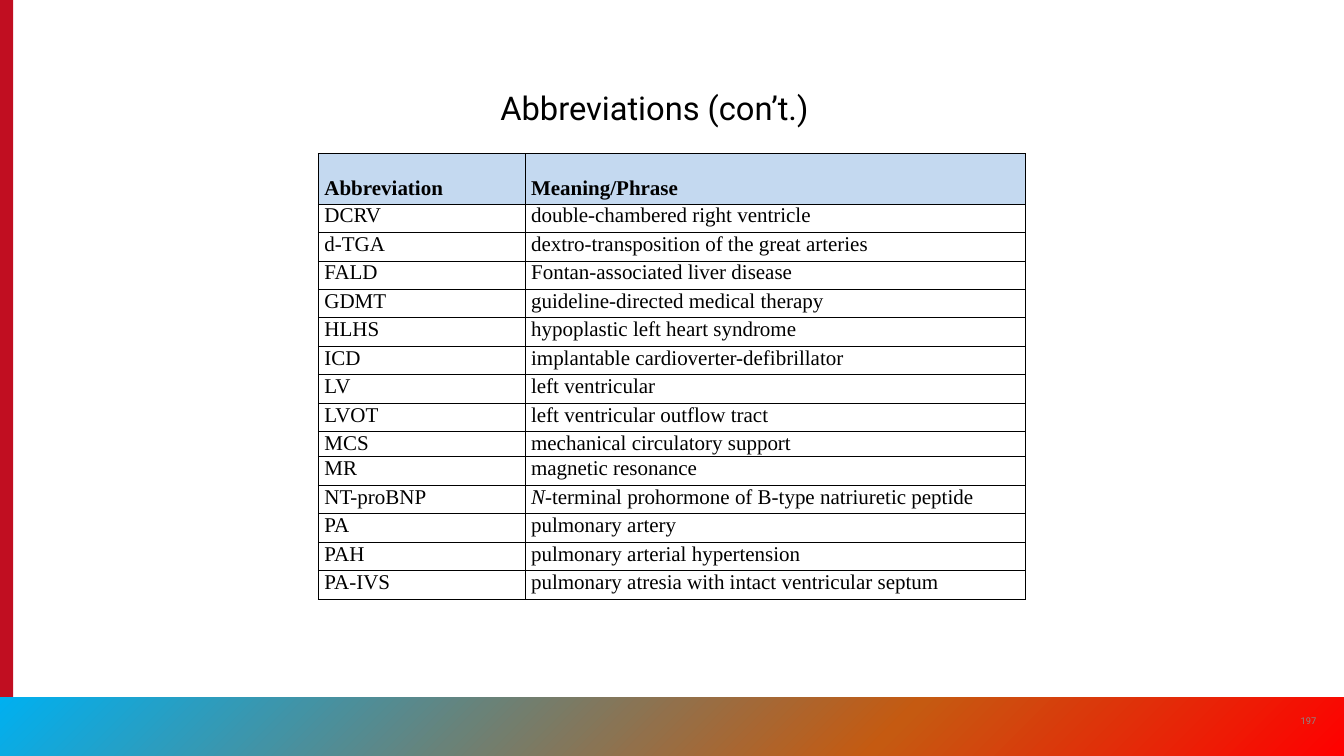
import pptx
import pptx.util
import pptx.dml.color
import pptx.enum.shapes
import pptx.enum.text
import pptx.oxml
from pptx.util import Cm, Pt

NS = 'xmlns:a="http://schemas.openxmlformats.org/drawingml/2006/main"'


def color(hex_string):
    return pptx.dml.color.RGBColor.from_string(hex_string)


def style(p, font, size, hex_string):
    for r in p.runs:
        r.font.name = font
        r.font.size = Pt(size)
        r.font.color.rgb = color(hex_string)


prs = pptx.Presentation()
prs.slide_width, prs.slide_height = Cm(40.64), Cm(22.86)
s = prs.slides.add_slide(prs.slide_layouts[6])

# Red side bar and gradient footer
bars = []
for left, top, width, height in [(0, 0, 0.4, 22.86), (0, 21.08, 40.64, 1.78)]:
    bar = s.shapes.add_shape(pptx.enum.shapes.MSO_SHAPE.RECTANGLE,
                             Cm(left), Cm(top), Cm(width), Cm(height))
    bar.shadow.inherit = False
    bar.line.fill.background()
    bar.fill.solid()
    bar.fill.fore_color.rgb = color("C10E21")
    bars.append(bar)
footer = bars[1]
stops = "".join(f'<a:gs pos="{pos * 1000}"><a:srgbClr val="{c}"/></a:gs>'
                for pos, c in [(0, "00B0F0"), (66, "C55A11"), (100, "FF0000")])
solid = footer._element.spPr.find(pptx.oxml.ns.qn("a:solidFill"))
footer._element.spPr.replace(solid, pptx.oxml.parse_xml(
    f'<a:gradFill {NS} rotWithShape="1"><a:gsLst>{stops}</a:gsLst>'
    '<a:lin ang="2700000" scaled="0"/></a:gradFill>'))

# Slide number
number = s.shapes.add_textbox(Cm(38.96), Cm(21.18), Cm(1.22), Cm(1.22))
tf = number.text_frame
tf.text = "197"
tf.word_wrap = True
tf.margin_left = tf.margin_right = 0
tf.vertical_anchor = pptx.enum.text.MSO_ANCHOR.MIDDLE
tf.paragraphs[0].alignment = pptx.enum.text.PP_ALIGN.CENTER
style(tf.paragraphs[0], "Roboto", 8, "8A8B8A")

# Title
title = s.shapes.add_textbox(Cm(14.88), Cm(2.54), Cm(10.85), Cm(1.45))
tf = title.text_frame
tf.text = "Abbreviations (con’t.)"
tf.word_wrap = True
style(tf.paragraphs[0], "Roboto", 28, "000000")

# Abbreviation table
entries = [
    ("Abbreviation", "Meaning/Phrase"),
    ("DCRV", "double-chambered right ventricle"),
    ("d-TGA", "dextro-transposition of the great arteries"),
    ("FALD", "Fontan-associated liver disease"),
    ("GDMT", "guideline-directed medical therapy"),
    ("HLHS", "hypoplastic left heart syndrome"),
    ("ICD", "implantable cardioverter-defibrillator"),
    ("LV", "left ventricular"),
    ("LVOT", "left ventricular outflow tract"),
    ("MCS", "mechanical circulatory support"),
    ("MR", "magnetic resonance"),
    ("NT-proBNP", "N-terminal prohormone of B-type natriuretic peptide"),
    ("PA", "pulmonary artery"),
    ("PAH", "pulmonary arterial hypertension"),
    ("PA-IVS", "pulmonary atresia with intact ventricular septum"),
]
heights = {"Abbreviation": 1.35, "MCS": 0.54}
table = s.shapes.add_table(len(entries), 2, Cm(9.63), Cm(4.65),
                           Cm(21.39), Cm(13.36)).table
table.horz_banding = False
for column, width in zip(table.columns, (6.25, 15.14)):
    column.width = Cm(width)

for i, entry in enumerate(entries):
    table.rows[i].height = Cm(heights.get(entry[0], 0.86))
    for j, text in enumerate(entry):
        cell = table.cell(i, j)
        cell.margin_left = cell.margin_right = Cm(0.18)
        cell.margin_top = cell.margin_bottom = 0
        p = cell.text_frame.paragraphs[0]
        p.text = text
        p.space_after = Pt(8)
        if text.startswith("N-"):
            p.text = "N"
            p.runs[0].font.italic = True
            p.add_run().text = text[1:]
        style(p, "Times New Roman", 18, "000000")
        for r in p.runs:
            r.font.bold = i == 0
        # Borders come before the fill in the cell properties
        for side in ("lnL", "lnR", "lnT", "lnB"):
            cell._tc.get_or_add_tcPr().append(pptx.oxml.parse_xml(
                f'<a:{side} {NS} w="12700"><a:solidFill><a:srgbClr val="000000"/>'
                f'</a:solidFill></a:{side}>'))
        if i == 0:
            p.line_spacing = 2.0
            cell.fill.solid()
            cell.fill.fore_color.rgb = color("C4D9F0")
        else:
            cell.fill.background()

prs.save("out.pptx")
